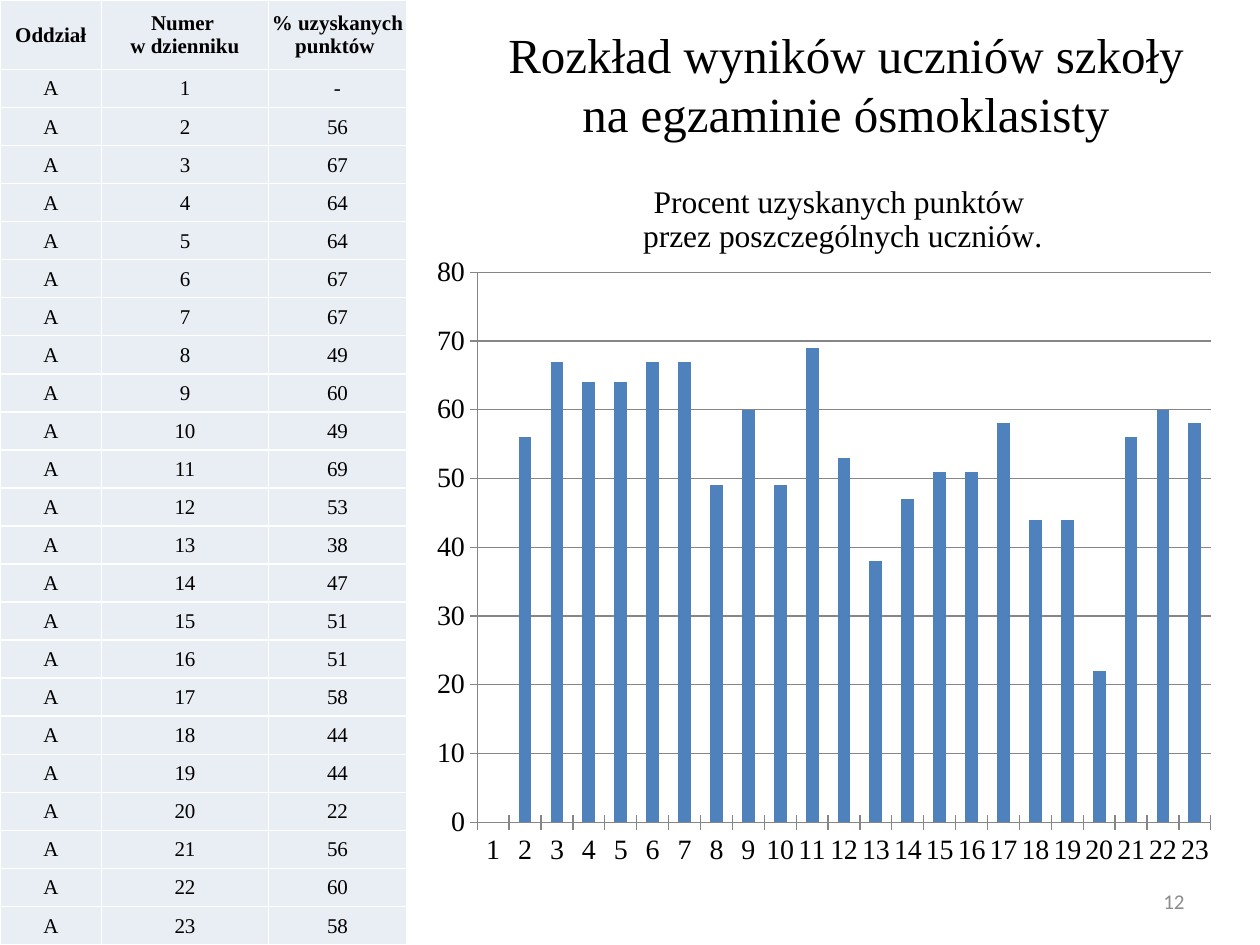
import lxml.etree
import pptx
import pptx.chart.data
import pptx.dml.color
import pptx.enum.chart
import pptx.enum.text
import pptx.oxml
import pptx.oxml.ns
import pptx.util

Cm = pptx.util.Cm
Pt = pptx.util.Pt
RGBColor = pptx.dml.color.RGBColor
ALIGN = pptx.enum.text.PP_ALIGN
MIDDLE = pptx.enum.text.MSO_ANCHOR.MIDDLE

BLACK = RGBColor(0x00, 0x00, 0x00)
WHITE = RGBColor(0xFF, 0xFF, 0xFF)
GREY = RGBColor(0x8C, 0x8C, 0x8C)
AXIS_GREY = RGBColor(0x86, 0x86, 0x86)
CELL_FILL = RGBColor(0xE9, 0xED, 0xF4)
BAR_BLUE = RGBColor(0x4F, 0x81, 0xBD)
SERIF = "Times New Roman"
SANS = "Calibri"

HEADINGS = ["Oddział", "Numer \nw dzienniku", "% uzyskanych punktów "]
SCORES = [None, 56, 67, 64, 64, 67, 67, 49, 60, 49, 69, 53,
          38, 47, 51, 51, 58, 44, 44, 22, 56, 60, 58]


def set_font(font, size, name=SERIF, color=BLACK, bold=False):
    font.size = Pt(size)
    font.name = name
    font.bold = bold
    font.color.rgb = color


def write_text(frame, text, size, align=ALIGN.CENTER, **font_format):
    """Fill a text frame, one paragraph for each line of text."""
    for index, line in enumerate(text.split("\n")):
        paragraph = frame.add_paragraph() if index else frame.paragraphs[0]
        paragraph.alignment = align
        run = paragraph.add_run()
        run.text = line
        set_font(run.font, size, **font_format)


def add_label(slide, box, text, size, inset=(0.25, 0.13), anchor=None, **text_format):
    frame = slide.shapes.add_textbox(*map(Cm, box)).text_frame
    frame.word_wrap = True
    frame.vertical_anchor = anchor
    frame.margin_left = frame.margin_right = Cm(inset[0])
    frame.margin_top = frame.margin_bottom = Cm(inset[1])
    write_text(frame, text, size, **text_format)


def style_cell(cell, text, bold):
    cell.fill.solid()
    cell.fill.fore_color.rgb = CELL_FILL
    cell.vertical_anchor = MIDDLE
    cell.margin_left = cell.margin_right = cell.margin_top = Cm(0.02)
    cell.margin_bottom = 0
    write_text(cell.text_frame, text, 12, bold=bold)
    # Borders come before the fill in the cell properties
    properties = cell._tc.get_or_add_tcPr()
    for position, side in enumerate(("lnL", "lnR", "lnT", "lnB")):
        border = pptx.oxml.parse_xml(
            f'<a:{side} {pptx.oxml.ns.nsdecls("a")} w="{Pt(1)}">'
            f'<a:solidFill><a:srgbClr val="{WHITE}"/></a:solidFill></a:{side}>')
        properties.insert(position, border)


def add_score_table(slide, box):
    left, top, width, height = box
    header_height = 1.4
    rows = [HEADINGS]
    for number, score in enumerate(SCORES, start=1):
        rows.append(["A", str(number), "-" if score is None else str(score)])

    table = slide.shapes.add_table(len(rows), len(HEADINGS), *map(Cm, box)).table
    table.horz_banding = False
    for column, share in zip(table.columns, (0.25, 0.41, 0.34)):
        column.width = Cm(width * share)
    for row in table.rows:
        row.height = Cm((height - header_height) / len(SCORES))
    table.rows[0].height = Cm(header_height)

    for row_index, row in enumerate(rows):
        for column_index, text in enumerate(row):
            style_cell(table.cell(row_index, column_index), text, bold=row_index == 0)


def manual_layout(**parts):
    """Make a c:layout element from fractions of the chart area."""
    layout = pptx.oxml.parse_xml(
        f'<c:layout {pptx.oxml.ns.nsdecls("c")}><c:manualLayout/></c:layout>')
    for tag, value in parts.items():
        lxml.etree.SubElement(layout[0], pptx.oxml.ns.qn(f"c:{tag}")).set("val", str(value))
    return layout


def replace_layout(parent, layout, position):
    for old in parent.findall(pptx.oxml.ns.qn("c:layout")):
        parent.remove(old)
    parent.insert(position, layout)


def add_score_chart(slide, box):
    scores = pptx.chart.data.CategoryChartData()
    scores.categories = [str(number) for number in range(1, len(SCORES) + 1)]
    scores.add_series("Series 1", SCORES)
    chart = slide.shapes.add_chart(
        pptx.enum.chart.XL_CHART_TYPE.COLUMN_CLUSTERED, *map(Cm, box), scores).chart
    set_font(chart.font, 18, name=SANS)
    chart.has_legend = False

    # Title
    chart.has_title = True
    write_text(chart.chart_title.text_frame,
               "Procent uzyskanych punktów \nprzez poszczególnych uczniów.", 18)
    chart.chart_title.include_in_layout = False
    replace_layout(chart.chart_title._element,
                   manual_layout(xMode="edge", yMode="edge", x=0.29, y=0.02), 1)

    # Plot area and columns
    plot = chart.plots[0]
    plot.gap_width = 150
    plot.vary_by_categories = False
    columns = plot.series[0].format
    columns.fill.solid()
    columns.fill.fore_color.rgb = BAR_BLUE
    replace_layout(plot._element.getparent(),
                   manual_layout(layoutTarget="inner", xMode="edge", yMode="edge",
                                 x=0.1, y=0.15, w=0.86, h=0.77), 0)

    # Axes
    for axis in (chart.category_axis, chart.value_axis):
        set_font(axis.tick_labels.font, 16)
        axis.major_tick_mark = pptx.enum.chart.XL_TICK_MARK.CROSS
        axis.format.line.color.rgb = AXIS_GREY
    chart.value_axis.minimum_scale = 0
    chart.value_axis.maximum_scale = 80
    chart.value_axis.major_unit = 10
    chart.value_axis.major_gridlines.format.line.color.rgb = AXIS_GREY


def main():
    deck = pptx.Presentation()
    deck.slide_width, deck.slide_height = Cm(25.4), Cm(19.05)
    slide = deck.slides.add_slide(deck.slide_layouts[6])

    add_label(slide, (8.71, 0, 16.69, 3.5),
              "Rozkład wyników uczniów szkoły \nna egzaminie ósmoklasisty",
              28, inset=(1.5, 0.5))
    add_score_table(slide, (0, 0, 8.2, 19.05))
    add_score_chart(slide, (7.9, 3.33, 17.2, 14.4))
    # Slide number
    add_label(slide, (18.2, 17.65, 5.93, 1.02), "12", 12, anchor=MIDDLE,
              align=ALIGN.RIGHT, name=SANS, color=GREY)

    deck.save("out.pptx")


if __name__ == "__main__":
    main()
